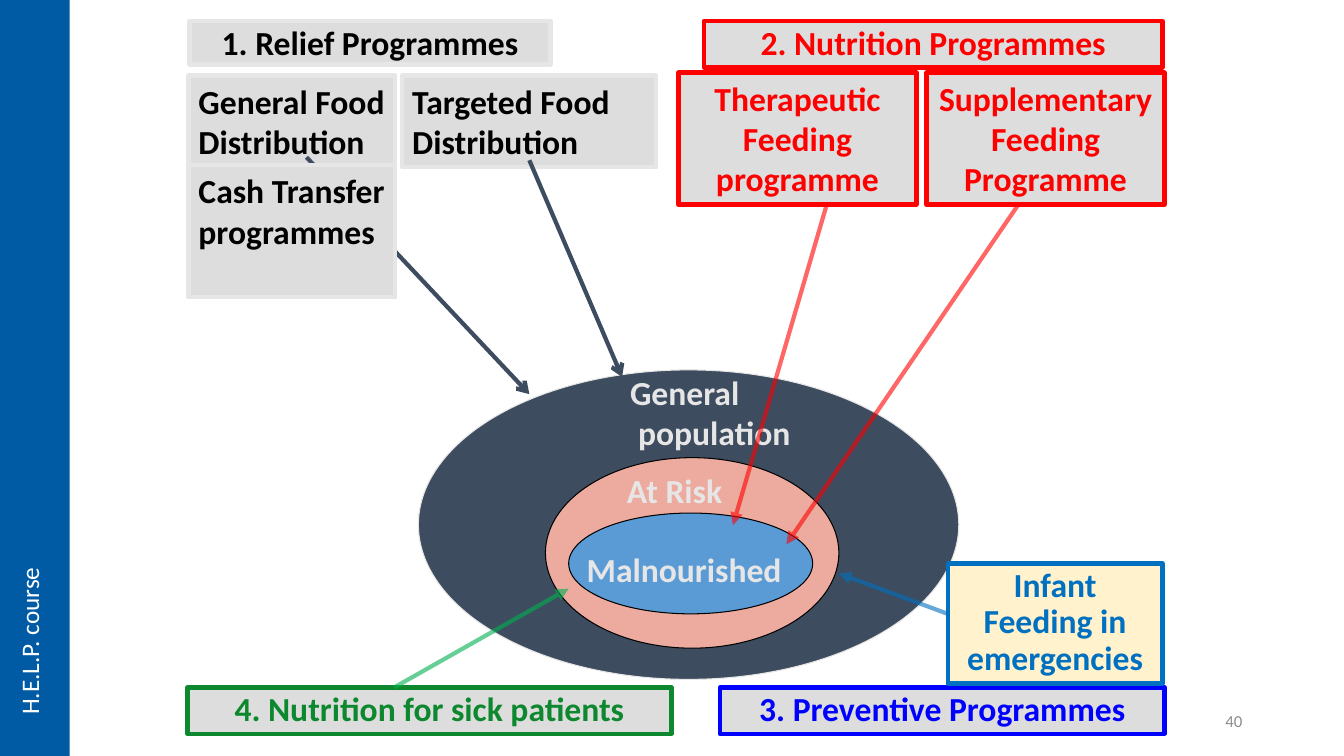
from lxml import etree
from pptx import Presentation
from pptx.dml.color import RGBColor
from pptx.enum import shapes, text
from pptx.oxml import ns
from pptx.util import Inches, Pt

THEME = {
    "font": "Calibri",
    "sizes": {"label": 24, "course": 18, "number": 12},
    "colors": {
        "navy": "3D4C5F", "salmon": "ECAB9E", "sky": "5B9BD5", "mist": "E7E6E6",
        "panel": "DDDDDD", "cream": "FFF2CC", "black": "000000", "white": "FFFFFF",
        "red": "FF0000", "green": "0E882E", "leaf": "00B050", "blue": "0000FF",
        "azure": "0070C0", "band": "005BA4", "grey": "8C8C8C",
    },
}
LEFT, CENTER, RIGHT = text.PP_ALIGN.LEFT, text.PP_ALIGN.CENTER, text.PP_ALIGN.RIGHT
RECTANGLE, OVAL = shapes.MSO_SHAPE.RECTANGLE, shapes.MSO_SHAPE.OVAL


def color(name):
    return RGBColor.from_string(THEME["colors"][name])


def write(shape, lines, ink, size="label", align=LEFT, spacing=1.0, wrap=True):
    frame = shape.text_frame
    # The narrow right margin keeps the two-word lines together
    frame_format = {"word_wrap": wrap, "vertical_anchor": text.MSO_ANCHOR.TOP,
                    "margin_right": Inches(0.1 if align != LEFT else 0.04)}
    for name, value in frame_format.items():
        setattr(frame, name, value)
    frame.text = lines
    for paragraph in frame.paragraphs:
        paragraph.alignment = align
        paragraph.line_spacing = spacing
        font_format = {"name": THEME["font"], "size": Pt(THEME["sizes"][size]),
                       "bold": size == "label"}
        for name, value in font_format.items():
            setattr(paragraph.font, name, value)
        paragraph.font.color.rgb = color(ink)


presentation = Presentation()
presentation.slide_width, presentation.slide_height = Inches(13.33), Inches(7.5)
slide = presentation.slides.add_slide(presentation.slide_layouts[6])

# Nested population groups: place, fill, outline
groups = [
    ((4.15, 3.67, 5.36, 3.07), "navy", "mist"),
    ((5.41, 4.54, 2.91, 1.89), "salmon", "black"),
    ((5.64, 5.09, 2.42, 1), "sky", "black"),
]
for place, fill, outline in groups:
    shape = slide.shapes.add_shape(OVAL, *map(Inches, place))
    shape.shadow.inherit = False
    shape.fill.solid()
    shape.fill.fore_color.rgb = color(fill)
    shape.line.color.rgb = color(outline)
    shape.line.width = Pt(0.75)

# Names of the groups
group_names = [
    ((6.15, 3.64, 1.89, 0.91), "General\npopulation"),
    ((6.12, 4.61, 1.42, 0.5), "At Risk"),
    ((5.72, 5.4, 2.31, 0.5), "Malnourished"),
]
for place, name in group_names:
    shape = slide.shapes.add_textbox(*map(Inches, place))
    write(shape, name, "mist")
    for paragraph in shape.text_frame.paragraphs[1:]:
        paragraph.font._element.getparent().set("marL", str(Inches(0.08)))

# Programme boxes and arrows, back to front
# box: place, words, fill, outline, ink, alignment, line spacing
# arrow: start, end, colour, head, opacity in percent
programmes = [
    ("box", (6.98, 0.21, 4.55, 0.46), "2. Nutrition Programmes", "panel", "red", "red", CENTER, 0.9),
    ("box", (1.88, 0.21, 3.58, 0.43), "1. Relief Programmes", "panel", "mist", "black", CENTER, 0.9),
    ("box", (1.87, 0.75, 2.05, 0.91), "General Food Distribution", "panel", "mist", "black", LEFT, 1.0),
    ("arrow", (3.04, 1.56), (5.25, 3.91), "navy", "arrow", 100),
    ("box", (3.99, 0.75, 2.52, 0.91), "Targeted Food Distribution", "panel", "mist", "black", LEFT, 1.0),
    ("arrow", (5.25, 1.59), (6.17, 3.74), "navy", "arrow", 100),
    ("box", (1.87, 1.64, 2.05, 1.31), "Cash Transfer programmes", "panel", "mist", "black", LEFT, 1.0),
    ("box", (1.86, 6.82, 4.8, 0.46), "4. Nutrition for sick patients", "panel", "green", "green", CENTER, 0.9),
    ("box", (7.14, 6.82, 4.41, 0.46), "3. Preventive Programmes", "panel", "blue", "blue", CENTER, 0.9),
    ("box", (6.73, 0.72, 2.36, 1.31), "Therapeutic Feeding programme", "panel", "red", "red", CENTER, 1.0),
    ("box", (9.19, 0.72, 2.36, 1.31), "Supplementary Feeding Programme", "panel", "red", "red", CENTER, 1.0),
    ("arrow", (8.2, 2.03), (7.27, 5.21), "red", "triangle", 60),
    ("arrow", (10.1, 2.03), (7.8, 5.4), "red", "triangle", 60),
    ("box", (9.4, 5.59, 2.13, 1.19), "Infant Feeding in emergencies", "cream", "azure", "azure", CENTER, 0.9),
    ("arrow", (9.4, 6.09), (8.32, 5.69), "azure", "triangle", 60),
    ("arrow", (3.91, 6.82), (5.64, 5.84), "leaf", "triangle", 60),
]
for kind, *details in programmes:
    if kind == "box":
        place, words, fill, outline, ink, align, spacing = details
        shape = slide.shapes.add_shape(RECTANGLE, *map(Inches, place))
        shape.shadow.inherit = False
        shape.fill.solid()
        shape.fill.fore_color.rgb = color(fill)
        shape.line.color.rgb = color(outline)
        shape.line.width = Pt(3)
        write(shape, words, ink, align=align, spacing=spacing)
    else:
        start, end, ink, head, opacity = details
        connector = slide.shapes.add_connector(
            shapes.MSO_CONNECTOR.STRAIGHT, *map(Inches, start + end))
        connector.line.color.rgb = color(ink)
        connector.line.width = Pt(3)
        outline = connector.line._get_or_add_ln()
        if opacity < 100:
            tint = outline.find(".//" + ns.qn("a:srgbClr"))
            etree.SubElement(tint, ns.qn("a:alpha"), val=str(opacity * 1000))
        etree.SubElement(outline, ns.qn("a:tailEnd"), type=head)
        etree.SubElement(connector._element.spPr, ns.qn("a:effectLst"))

# Side band with the course name
band = slide.shapes.add_shape(RECTANGLE, 0, 0, Inches(0.69), presentation.slide_height)
band.shadow.inherit = False
band.fill.solid()
band.fill.fore_color.rgb = color("band")
band.line.fill.background()
course = slide.shapes.add_textbox(*map(Inches, (0.09, 5.61, 0.5, 1.58)))
write(course, "H.E.L.P. course", "white", size="course", wrap=False)
course.text_frame._txBody.bodyPr.set("vert", "vert270")

# Slide number
number = slide.shapes.add_textbox(*map(Inches, (9.42, 6.95, 3, 0.4)))
write(number, "40", "grey", size="number", align=RIGHT)
number.text_frame.vertical_anchor = text.MSO_ANCHOR.MIDDLE

presentation.save("out.pptx")
